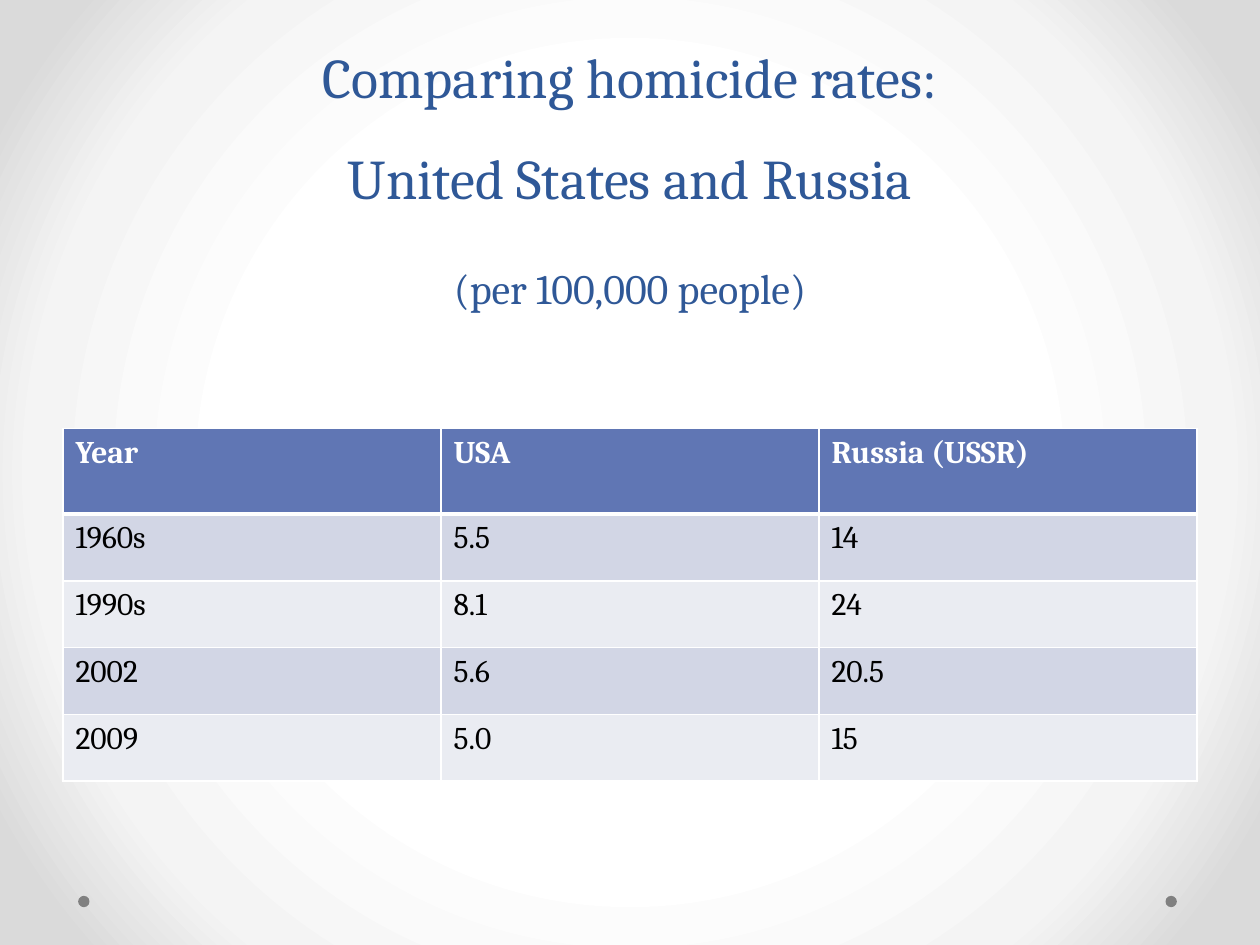
"""Build a slide comparing homicide rates in the United States and Russia."""
from lxml import etree
from pptx import Presentation
from pptx.dml.color import RGBColor
from pptx.enum import shapes, text
from pptx.oxml.ns import qn
from pptx.util import Inches, Pt

TITLE = [
    ("Comparing homicide rates:", 32),
    ("United States and Russia", 32),
    ("(per 100,000 people)", 24),
]
RATES = [
    ("Year", "USA", "Russia (USSR)"),
    ("1960s", "5.5", "14"),
    ("1990s", "8.1", "24"),
    ("2002", "5.6", "20.5"),
    ("2009", "5.0", "15"),
]
BACKDROP = [(50, "FFFFFF"), (76, "F4F4F4"), (92, "DADADA")]
DOT_LEFTS = [9.25, 0.62]
HEADER_FILL = "6076B4"
BAND_FILLS = ["EAECF2", "D2D6E5"]
HEADER_HEIGHT, ROW_HEIGHT, COLUMN_WIDTH = 0.68, 0.53, 3


def rgb(value):
    return RGBColor.from_string(value)


def write(paragraph, words, size=18, color="000000", bold=False):
    run = paragraph.add_run()
    run.text = words
    run.font.name = "Cambria"
    run.font.size = Pt(size)
    run.font.bold = bold
    run.font.color.rgb = rgb(color)


def add_color(parent, value):
    etree.SubElement(parent, qn("a:srgbClr"), val=value)


def paint_backdrop(slide):
    slide.background.fill.gradient()
    gradient = next(slide.element.iter(qn("a:gradFill")))
    for child in list(gradient):
        gradient.remove(child)
    stops = etree.SubElement(gradient, qn("a:gsLst"))
    for percent, value in BACKDROP:
        stop = etree.SubElement(stops, qn("a:gs"), pos=str(percent * 1000))
        add_color(stop, value)
    circle = etree.SubElement(gradient, qn("a:path"), path="circle")
    edges = dict.fromkeys("ltrb", "50000")
    etree.SubElement(circle, qn("a:fillToRect"), **edges)


def add_dots(slide):
    for left in DOT_LEFTS:
        dot = slide.shapes.add_shape(
            shapes.MSO_SHAPE.OVAL, Inches(left), Inches(7.11), Inches(0.09), Inches(0.09))
        dot.shadow.inherit = False
        dot.fill.solid()
        dot.fill.fore_color.rgb = rgb("808080")
        dot.line.fill.background()


def add_title(slide):
    title = slide.shapes.add_textbox(Inches(0.5), Inches(0.25), Inches(9), Inches(2.28))
    frame = title.text_frame
    frame.word_wrap = True
    frame.vertical_anchor = text.MSO_ANCHOR.BOTTOM
    heading = frame.paragraphs[0]
    heading.alignment = text.PP_ALIGN.CENTER
    heading.line_spacing = Pt(58)
    for index, (words, size) in enumerate(TITLE):
        if index:
            heading.add_line_break()
        write(heading, words, size=size, color="2F5897")


def add_borders(cell, bottom):
    properties = cell._tc.get_or_add_tcPr()
    for side, width in zip("LRTB", (1, 1, 1, bottom)):
        border = etree.SubElement(properties, qn(f"a:ln{side}"), w=str(Pt(width)))
        add_color(etree.SubElement(border, qn("a:solidFill")), "FFFFFF")


def add_rates(slide):
    heights = [HEADER_HEIGHT] + [ROW_HEIGHT] * (len(RATES) - 1)
    columns = len(RATES[0])
    table = slide.shapes.add_table(
        len(RATES), columns, Inches(0.5), Inches(3.4),
        Inches(COLUMN_WIDTH * columns), Inches(sum(heights))).table
    for row, (height, entries) in enumerate(zip(heights, RATES)):
        table.rows[row].height = Inches(height)
        header = row == 0
        for column, words in enumerate(entries):
            cell = table.cell(row, column)
            add_borders(cell, bottom=3 if header else 1)
            cell.fill.solid()
            cell.fill.fore_color.rgb = rgb(HEADER_FILL if header else BAND_FILLS[row % 2])
            write(cell.text_frame.paragraphs[0], words,
                  color="FFFFFF" if header else "000000", bold=header)


def main():
    deck = Presentation()
    deck.slide_width, deck.slide_height = Inches(10), Inches(7.5)
    slide = deck.slides.add_slide(deck.slide_layouts[6])
    paint_backdrop(slide)
    add_dots(slide)
    add_title(slide)
    add_rates(slide)
    deck.save("out.pptx")


if __name__ == "__main__":
    main()
